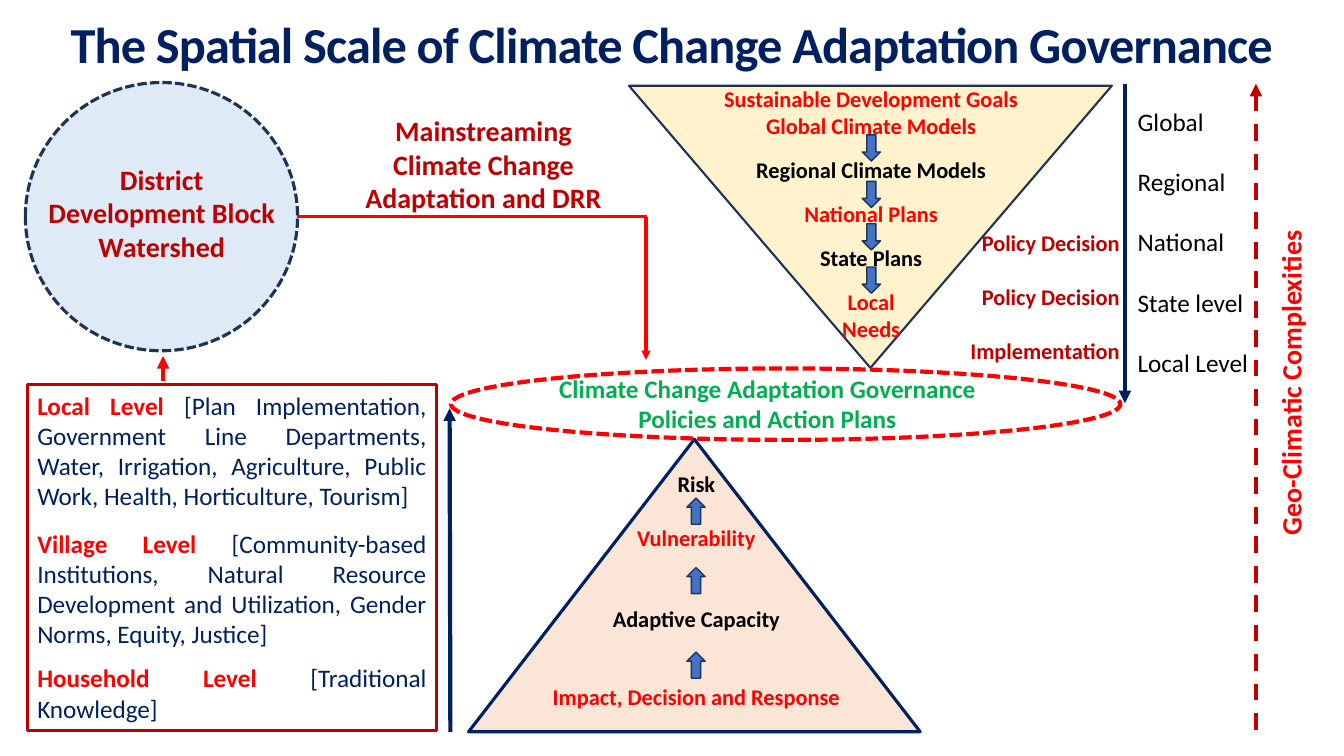
from lxml import etree
from pptx import Presentation
from pptx import util as u
from pptx.dml.color import RGBColor
from pptx.enum import dml, shapes, text
from pptx.oxml.ns import qn

NAVY, RED, DARK_RED, BLACK = "002060", "FF0000", "C00000", "000000"
OUTLINE, GREEN, BLUE = "1E3256", "00B050", "4472C4"
CENTER, LEFT = text.PP_ALIGN.CENTER, text.PP_ALIGN.LEFT
RIGHT, JUSTIFY = text.PP_ALIGN.RIGHT, text.PP_ALIGN.JUSTIFY
KIND = shapes.MSO_SHAPE
DASH, SHORT_DASH = dml.MSO_LINE.DASH, dml.MSO_LINE.SQUARE_DOT


def color(value):
    return RGBColor.from_string(value)


def set_line(line, hue, width, dash=None):
    line.color.rgb = color(hue)
    line.width = u.Pt(width)
    if dash:
        line.dash_style = dash


def add_shape(page, kind, place, hue, width, fill=None, dash=None, rotation=0):
    shape = page.shapes.add_shape(kind, *map(u.Cm, place))
    shape.shadow.inherit = False
    shape.rotation = rotation
    if fill:
        shape.fill.solid()
        shape.fill.fore_color.rgb = color(fill)
    else:
        shape.fill.background()
    set_line(shape.line, hue, width, dash)
    return shape


def add_line(page, start, end, hue, width, dash=None, arrow=True):
    line = page.shapes.add_connector(
        shapes.MSO_CONNECTOR.STRAIGHT, *map(u.Cm, start + end))
    set_line(line.line, hue, width, dash)
    if arrow:
        etree.SubElement(line.line._get_or_add_ln(), qn("a:tailEnd"), type="triangle")
    etree.SubElement(line._element.spPr, qn("a:effectLst"))


def write(shape, rows, size, align=CENTER, bold=True, spacing=None):
    """Each row is (space before in points, [(words, colour), ...])."""
    frame = shape.text_frame
    frame.word_wrap = True
    frame.vertical_anchor = text.MSO_ANCHOR.TOP
    for number, (gap, pieces) in enumerate(rows):
        para = frame.add_paragraph() if number else frame.paragraphs[0]
        para.alignment = align
        para.space_before = u.Pt(gap)
        para.font.name = "Calibri"
        para.font.size = u.Pt(size)
        para.font.bold = bold
        if spacing:
            para.line_spacing = spacing
        for words, hue in pieces:
            span = para.add_run()
            span.text = words
            span.font.name = "Calibri"
            span.font.size = u.Pt(size)
            span.font.bold = bold
            span.font.color.rgb = color(hue)
    return frame


def add_text(page, place, rows, size, **style):
    box = page.shapes.add_textbox(*map(u.Cm, place))
    return write(box, rows, size, **style)


def plain(lines, hue, gap=0):
    return [(gap if number else 0, [(line, hue)]) for number, line in enumerate(lines)]


def add_step_arrows(page, left, tops, rotation=0):
    for top in tops:
        add_shape(page, KIND.DOWN_ARROW, (left, top, 0.46, 0.66),
                  OUTLINE, 1, BLUE, rotation=rotation)


def add_title(page):
    frame = add_text(page, (0, 0.1, 33.86, 2.01), plain(
        ["The Spatial Scale of Climate Change Adaptation Governance"], NAVY), 36)
    frame.vertical_anchor = text.MSO_ANCHOR.MIDDLE
    frame.paragraphs[0].runs[0]._r.get_or_add_rPr().set("spc", "-60")


def add_funnel(page):
    add_shape(page, KIND.ISOSCELES_TRIANGLE, (15.85, 2.16, 12.17, 7.11),
              OUTLINE, 1.5, "FFF2CC", rotation=180)
    gap = 12.2
    add_text(page, (17.55, 2.03, 8.81, 6.76), [
        (0, [("Sustainable Development Goals", RED)]),
        (0, [("Global Climate Models", RED)]),
        (gap, [("Regional Climate Models", BLACK)]),
        (gap, [("National Plans", RED)]),
        (gap, [("State Plans", BLACK)]),
        (gap, [("Local", RED)]),
        (0, [("Needs", RED)])], 16)
    add_step_arrows(page, 21.73, (3.4, 4.57, 5.64, 6.73))


def add_pyramid(page):
    add_shape(page, KIND.ISOSCELES_TRIANGLE, (11.81, 11.07, 11.38, 7.37),
              NAVY, 2.25, "FBE5D6")
    add_text(page, (12.65, 11.71, 9.8, 6.32), [
        (0, [("Risk", BLACK)]),
        (19.5, [("Vulnerability", RED)]),
        (39, [("Adaptive Capacity", BLACK)]),
        (36.6, [("Impact, Decision and Response", RED)])], 16)
    add_step_arrows(page, 17.31, (12.55, 14.3, 16.43), rotation=180)


def add_scales(page):
    add_text(page, (28.42, 1.78, 4.67, 7.75), plain(
        ["Global", "Regional", "National", "State level", "Local Level"], BLACK),
        18, align=LEFT, bold=False, spacing=2.0)
    add_line(page, (28.35, 2.11), (28.35, 10.16), NAVY, 3)
    add_line(page, (11.35, 18.44), (11.33, 10.29), NAVY, 3)
    add_line(page, (31.65, 18.39), (31.65, 2.11), DARK_RED, 3, DASH)
    label = add_shape(page, KIND.RECTANGLE, (26.54, 9.09, 11.99, 1.12),
                      "FFFFFF", 0.75, rotation=270)
    write(label, plain(["Geo-Climatic Complexities"], RED), 20)
    decisions = add_text(page, (23.06, 5.64, 6.53, 3.68), plain(
        ["Policy Decision", "Policy Decision", "Implementation"], DARK_RED, 19.5),
        16, align=RIGHT)
    decisions.margin_right = u.Cm(1.37)


def add_levels(page):
    box = add_shape(page, KIND.RECTANGLE, (0.69, 9.7, 10.31, 8.71), DARK_RED, 2.25)
    levels = [
        (0, "Local Level ", "[Plan Implementation, Government Line Departments, Water, "
         "Irrigation, Agriculture, Public Work, Health, Horticulture, Tourism]"),
        (12.2, "Village Level ", "[Community-based Institutions, Natural Resource "
         "Development and Utilization, Gender Norms, Equity, Justice]"),
        (9.8, "Household Level ", "[Traditional Knowledge]")]
    frame = write(box, [(gap, [(name, RED), (details, NAVY)])
                        for gap, name, details in levels],
                  18, align=JUSTIFY, bold=False)
    for para in frame.paragraphs:
        para.runs[0].font.bold = True
    add_line(page, (4.11, 9.6), (4.11, 8.97), RED, 3)


def add_governance(page):
    add_shape(page, KIND.OVAL, (18.9, 1.75, 1.8, 16.87), RED, 3,
              dash=SHORT_DASH, rotation=90)
    add_text(page, (13.03, 9.27, 12.62, 1.8), plain(
        ["Climate Change Adaptation Governance Policies and Action Plans"], GREEN), 18)


def add_district(page):
    add_shape(page, KIND.OVAL, (0.64, 2.08, 6.86, 6.76), OUTLINE, 2.25,
              "DEEBF7", SHORT_DASH)
    add_text(page, (0.81, 3.96, 6.53, 2.82), plain(
        ["District", "Development Block", "Watershed"], DARK_RED), 20)
    add_line(page, (7.49, 5.46), (16.31, 5.46), RED, 2.25, arrow=False)
    add_line(page, (16.28, 5.46), (16.28, 9.07), RED, 2.25)
    add_text(page, (8.92, 2.74, 6.53, 2.82), plain(
        ["Mainstreaming Climate Change Adaptation and DRR"], DARK_RED), 20)


def main():
    deck = Presentation()
    deck.slide_width, deck.slide_height = u.Cm(33.87), u.Cm(19.05)
    page = deck.slides.add_slide(deck.slide_layouts[6])
    add_title(page)
    # Upper and lower triangles with their scales
    add_funnel(page)
    add_pyramid(page)
    add_scales(page)
    # Local levels, the shared policies and the district link
    add_levels(page)
    add_governance(page)
    add_district(page)
    deck.save("out.pptx")


if __name__ == "__main__":
    main()
